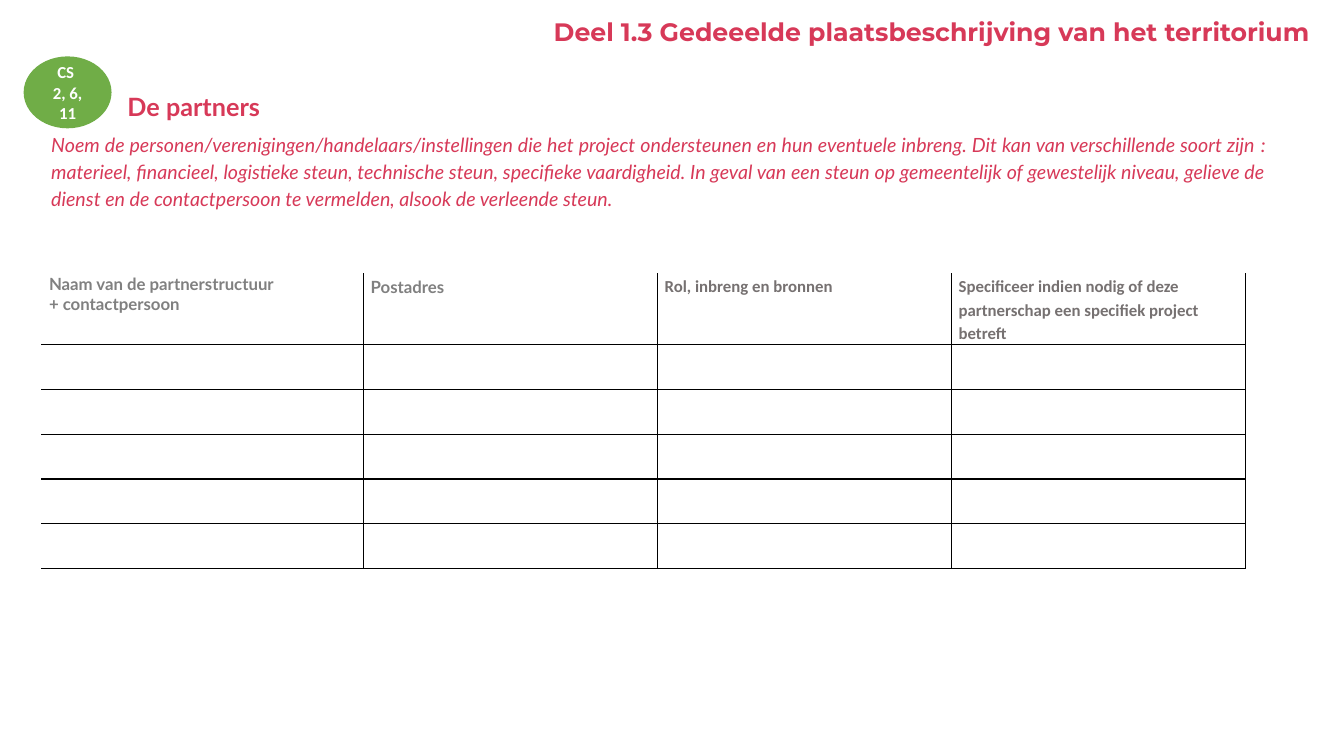
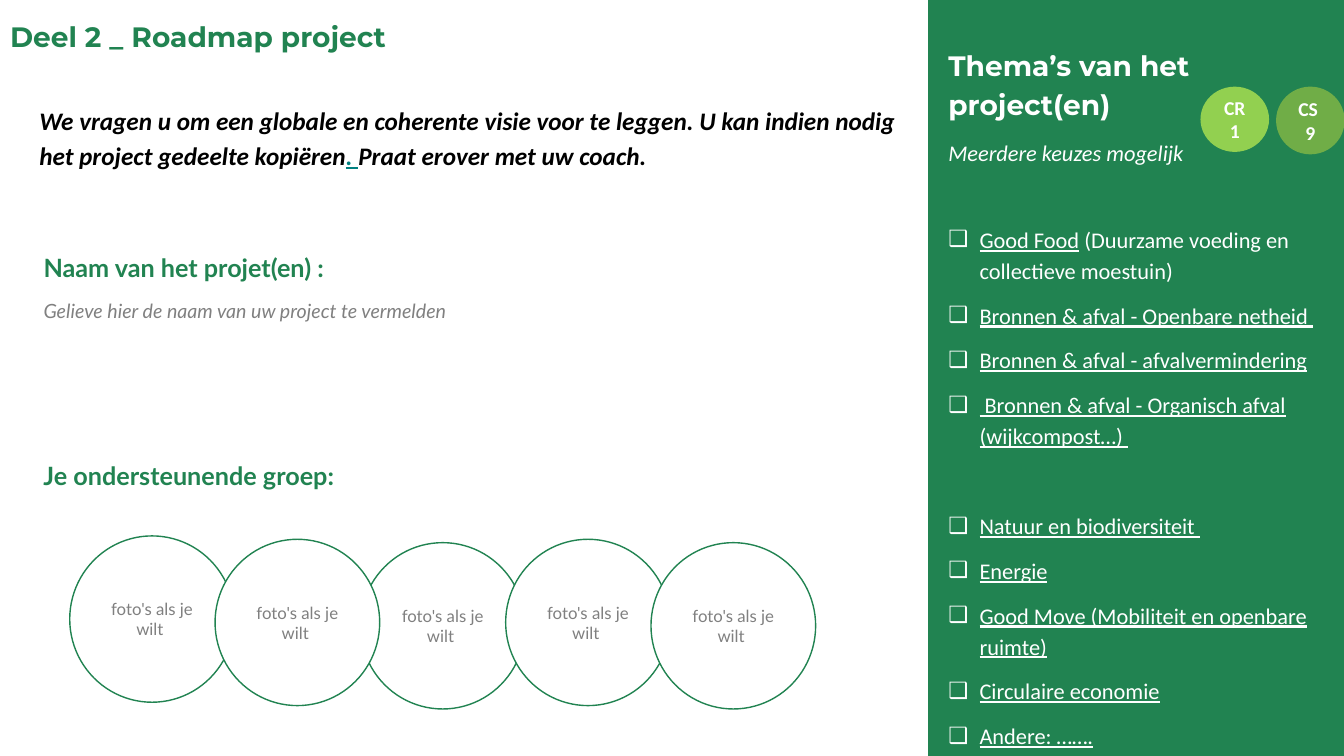
from dataclasses import dataclass
from typing import NamedTuple

from lxml.etree import SubElement
from pptx import Presentation
from pptx.dml.color import RGBColor
from pptx.enum.shapes import MSO_SHAPE as Preset
from pptx.enum.text import MSO_ANCHOR as Anchor, MSO_AUTO_SIZE as AutoSize, PP_ALIGN as Align
from pptx.oxml.ns import qn
from pptx.util import Inches, Pt

COLUMNS, ROWS = 160, 90
CELL = Inches(7.5) // ROWS

COLORS = {
    "white": "FFFFFF",
    "black": "000000",
    "red": "D73958",
    "green": "218351",
    "leaf": "70AD47",
    "lime": "92D050",
    "teal": "008080",
    "gray": "808080",
    "warm gray": "767171",
}


def font_format(name: str, size: int, color: str, **flags: bool) -> dict:
    return {"name": name, "size": Pt(size), "color": color, **flags}


TITLE_RED = font_format("Montserrat", 18, "red", bold=True)
TITLE_GREEN = font_format("Montserrat", 20, "green", bold=True)
TITLE_WHITE = TITLE_GREEN | {"color": "white"}
HEADING_RED = font_format("Lato", 18, "red", bold=True)
HEADING_GREEN = HEADING_RED | {"color": "green"}
HINT_RED = font_format("Lato", 14, "red", italic=True)
HINT_GRAY = HINT_RED | {"color": "gray"}
INTRO = font_format("Calibri", 18, "black", bold=True, italic=True)
INTRO_LINK = INTRO | {"color": "teal", "underline": True}
BADGE_SMALL = font_format("Calibri", 12, "white", bold=True)
BADGE_LARGE = BADGE_SMALL | {"size": Pt(14)}
PHOTO = font_format("Lato", 12, "gray")
HEADER_LATO = PHOTO | {"bold": True}
HEADER_CALIBRI = font_format("Calibri", 12, "warm gray", bold=True)
THEME = font_format("Calibri", 16, "white")
THEME_NOTE = THEME | {"italic": True}
THEME_LINK = THEME | {"underline": True}

TIGHT = {"line_spacing": 0.87}
LOOSE = {"line_spacing": 1.15, "space_after": Pt(10)}
CENTERED = {"alignment": Align.CENTER}
DEFAULT_INSETS = (0.1, 0.05, 0.1, 0.05)
DEEP_INSETS = (0.1, 0.1, 0.1, 0.05)


class Area(NamedTuple):
    column: float
    row: float
    columns: float
    rows: float

    def lengths(self) -> list[int]:
        return [grid(value) for value in self]


class Run(NamedTuple):
    text: str
    font: dict


@dataclass
class Line:
    runs: list[Run]
    layout: dict
    indent: float = 0
    bullet: str = ""
    tab: float = 0


@dataclass
class TextBlock:
    area: Area
    lines: list[Line]
    insets: tuple = DEFAULT_INSETS
    anchor: Anchor = Anchor.TOP


@dataclass
class Ellipse:
    area: Area
    fill: str
    outline: str
    texts: list[str]
    font: dict


def grid(cells: float) -> int:
    return round(cells * CELL)


def rgb(name: str) -> RGBColor:
    return RGBColor.from_string(COLORS[name])


def plain(text: str, font: dict, **layout) -> Line:
    return Line([Run(text, font)], layout)


def theme(text: str, rest: str = "", before: int = 0, tab: float = 0) -> Line:
    runs = [Run(text, THEME_LINK)] + ([Run(rest, THEME)] if rest else [])
    return Line(runs, LOOSE | {"space_before": Pt(before)}, 0.31, "❑", tab)


def set_font(font, values: dict) -> None:
    for name, value in values.items():
        if name == "color":
            font.color.rgb = rgb(value)
        else:
            setattr(font, name, value)


def write_line(paragraph, line: Line) -> None:
    for name, value in ({"space_before": Pt(0), "alignment": Align.LEFT} | line.layout).items():
        setattr(paragraph, name, value)
    properties = paragraph._p.get_or_add_pPr()
    properties.set("marL", str(Inches(line.indent)))
    properties.set("indent", str(-Inches(line.indent) if line.bullet else 0))
    if line.bullet:
        SubElement(properties, qn("a:buFont"), typeface="Arial")
        SubElement(properties, qn("a:buChar"), char=line.bullet)
    else:
        SubElement(properties, qn("a:buNone"))
    if line.tab:
        stops = SubElement(properties, qn("a:tabLst"))
        SubElement(stops, qn("a:tab"), pos=str(Inches(line.tab)), algn="l")
    for text, font in line.runs:
        run = paragraph.add_run()
        run.text = text
        set_font(run.font, {"bold": False, "italic": False} | font)


def write(frame, lines: list[Line]) -> None:
    for index, line in enumerate(lines):
        write_line(frame.add_paragraph() if index else frame.paragraphs[0], line)


def place_text(shape, block: TextBlock) -> None:
    shape.left, shape.top, shape.width, shape.height = block.area.lengths()
    frame = shape.text_frame
    left, top, right, bottom = map(Inches, block.insets)
    values = {
        "word_wrap": True, "auto_size": AutoSize.NONE, "vertical_anchor": block.anchor,
        "margin_left": left, "margin_top": top, "margin_right": right, "margin_bottom": bottom,
    }
    for name, value in values.items():
        setattr(frame, name, value)
    write(frame, block.lines)


def add_text(slide, block: TextBlock) -> None:
    place_text(slide.shapes.add_textbox(*block.area.lengths()), block)


def add_filled(slide, preset: Preset, area: Area, fill: str, outline: str):
    shape = slide.shapes.add_shape(preset, *area.lengths())
    shape.shadow.inherit = False
    shape.fill.solid()
    shape.fill.fore_color.rgb = rgb(fill)
    shape.line.color.rgb = rgb(outline)
    shape.line.width = Pt(1)
    return shape


def add_ellipse(slide, ellipse: Ellipse) -> None:
    shape = add_filled(slide, Preset.OVAL, ellipse.area, ellipse.fill, ellipse.outline)
    lines = [plain(text, ellipse.font, **CENTERED) for text in ellipse.texts]
    place_text(shape, TextBlock(ellipse.area, lines, anchor=Anchor.MIDDLE))


def format_cell(cell, borders: dict) -> None:
    properties = cell._tc.get_or_add_tcPr()
    for side, color in borders.items():
        line = SubElement(properties, qn(f"a:ln{side}"), w=str(Pt(1)))
        SubElement(SubElement(line, qn("a:solidFill")), qn("a:srgbClr"), val=COLORS[color])
    cell.fill.solid()
    cell.fill.fore_color.rgb = rgb("white")


def add_partner_table(slide, area: Area, widths: list, heights: list, headers: list) -> None:
    table = slide.shapes.add_table(len(heights), len(widths), *area.lengths()).table
    table.first_row = table.horz_banding = False
    for column, width in zip(table.columns, widths):
        column.width = grid(width)
    for row_index, (row, height) in enumerate(zip(table.rows, heights)):
        row.height = grid(height)
        for column_index, cell in enumerate(row.cells):
            format_cell(cell, {
                "L": "black" if column_index else "white",
                "R": "black",
                "T": "black" if row_index else "white",
                "B": "black",
            })
    for cell, lines in zip(table.rows[0].cells, headers):
        cell.margin_left = cell.margin_right = Inches(0.07)
        cell.margin_top = cell.margin_bottom = 0
        write(cell.text_frame, lines)


def start_slide(presentation, title: TextBlock, body: TextBlock):
    slide = presentation.slides.add_slide(presentation.slide_layouts[1])
    title.anchor = Anchor.BOTTOM
    place_text(slide.shapes.title, title)
    place_text(slide.placeholders[1], body)
    return slide


def build_partners(presentation) -> None:
    title = plain("Deel 1.3 Gedeeelde plaatsbeschrijving van het territorium", TITLE_RED,
                  **TIGHT | {"alignment": Align.RIGHT})
    explanation = plain(
        "Noem de personen/verenigingen/handelaars/instellingen die het project ondersteunen en hun "
        "eventuele inbreng. Dit kan van verschillende soort zijn\u00a0: materieel, financieel, logistieke "
        "steun, technische steun, specifieke vaardigheid. In geval van een steun op gemeentelijk of "
        "gewestelijk niveau, gelieve de dienst en de contactpersoon te vermelden, alsook de verleende steun.",
        HINT_RED, **LOOSE | {"alignment": Align.JUSTIFY})
    explanation.indent = 0.5
    slide = start_slide(presentation,
                        TextBlock(Area(31.7, 1.9, 125.4, 4.3), [title]),
                        TextBlock(Area(-1.1, 14.8, 153, 10.7), [explanation]))
    add_text(slide, TextBlock(Area(14, 9.8, 103, 5.2), [plain("De partners", HEADING_RED, **LOOSE)]))
    headers = [
        [plain("Naam van de partnerstructuur", HEADER_LATO), plain("+ contactpersoon", HEADER_LATO)],
        [plain("Postadres", HEADER_LATO, **LOOSE)],
        [plain("Rol, inbreng en bronnen", HEADER_CALIBRI, **LOOSE)],
        [plain("Specificeer indien nodig of deze partnerschap een specifiek project betreft",
               HEADER_CALIBRI, **LOOSE)],
    ]
    add_partner_table(slide, Area(5, 32.6, 143.3, 34.8), [38.3] + [35] * 3, [7.4] + [5.34] * 5, headers)
    add_ellipse(slide, Ellipse(Area(2.9, 6.8, 10.3, 8.4), "leaf", "leaf", ["CS ", "2, 6, 11"], BADGE_SMALL))


def build_roadmap(presentation) -> None:
    themes = [
        plain("Thema’s van het project(en)", TITLE_WHITE, **LOOSE),
        plain("Meerdere keuzes mogelijk", THEME_NOTE, **LOOSE),
        theme("Good Food", " (Duurzame voeding en collectieve moestuin)", before=30),
        theme("Bronnen & afval\u00a0- Openbare netheid "),
        theme("Bronnen & afval\u00a0- afvalvermindering"),
        theme(" Bronnen & afval\u00a0- Organisch afval (wijkcompost…) "),
        theme("Natuur en biodiversiteit\u00a0", before=32),
        theme("Energie"),
        theme("Good Move (Mobiliteit en openbare ruimte)"),
        theme("Circulaire economie\t", tab=2.75),
        theme("Andere: …….\t", tab=3.75),
    ]
    slide = start_slide(
        presentation,
        TextBlock(Area(0, 2, 90, 5), [plain("Deel 2 _ Roadmap project", TITLE_GREEN, **TIGHT)]),
        TextBlock(Area(111.7, 4, 48, 86), themes, DEEP_INSETS))
    sidebar = add_filled(slide, Preset.RECTANGLE, Area(110.6, 0, COLUMNS - 110.6, ROWS), "green", "green")
    slide.placeholders[1].element.addprevious(sidebar.element)

    intro = Line([
        Run("We vragen u om een globale en coherente visie voor te leggen. "
            "U kan indien nodig het project gedeelte kopiëren", INTRO),
        Run(". ", INTRO_LINK),
        Run("Praat erover met uw coach.", INTRO),
    ], LOOSE)
    for block in (
        TextBlock(Area(3.5, 10.8, 104.3, 14.5), [intro], DEEP_INSETS),
        TextBlock(Area(4, 28.9, 62.8, 5), [plain("Naam van het projet(en) :", HEADING_GREEN)], DEEP_INSETS),
        TextBlock(Area(4, 34.4, 71.2, 10),
                  [plain("Gelieve hier de naam van uw project te vermelden", HINT_GRAY)], DEEP_INSETS),
        TextBlock(Area(4, 54.2, 81.4, 4.8), [plain("Je ondersteunende groep:", HEADING_GREEN)]),
    ):
        add_text(slide, block)

    add_ellipse(slide, Ellipse(Area(152, 10.4, 8, 7.9), "leaf", "leaf", ["CS ", "9"], BADGE_LARGE))
    add_ellipse(slide, Ellipse(Area(143, 10.4, 8, 7.6), "lime", "lime", ["CR 1"], BADGE_LARGE))
    photo_rows = [63.8, 64.2, 64.6, 64.2, 64.6]
    for index in (2, 0, 1, 3, 4):
        area = Area(8.3 + 17.3 * index, photo_rows[index], 19.6, 19.8)
        add_ellipse(slide, Ellipse(area, "white", "green", ["foto's als je wilt "], PHOTO))


def main() -> None:
    presentation = Presentation()
    presentation.slide_width = COLUMNS * CELL
    presentation.slide_height = ROWS * CELL
    build_partners(presentation)
    build_roadmap(presentation)
    presentation.save("out.pptx")


if __name__ == "__main__":
    main()
